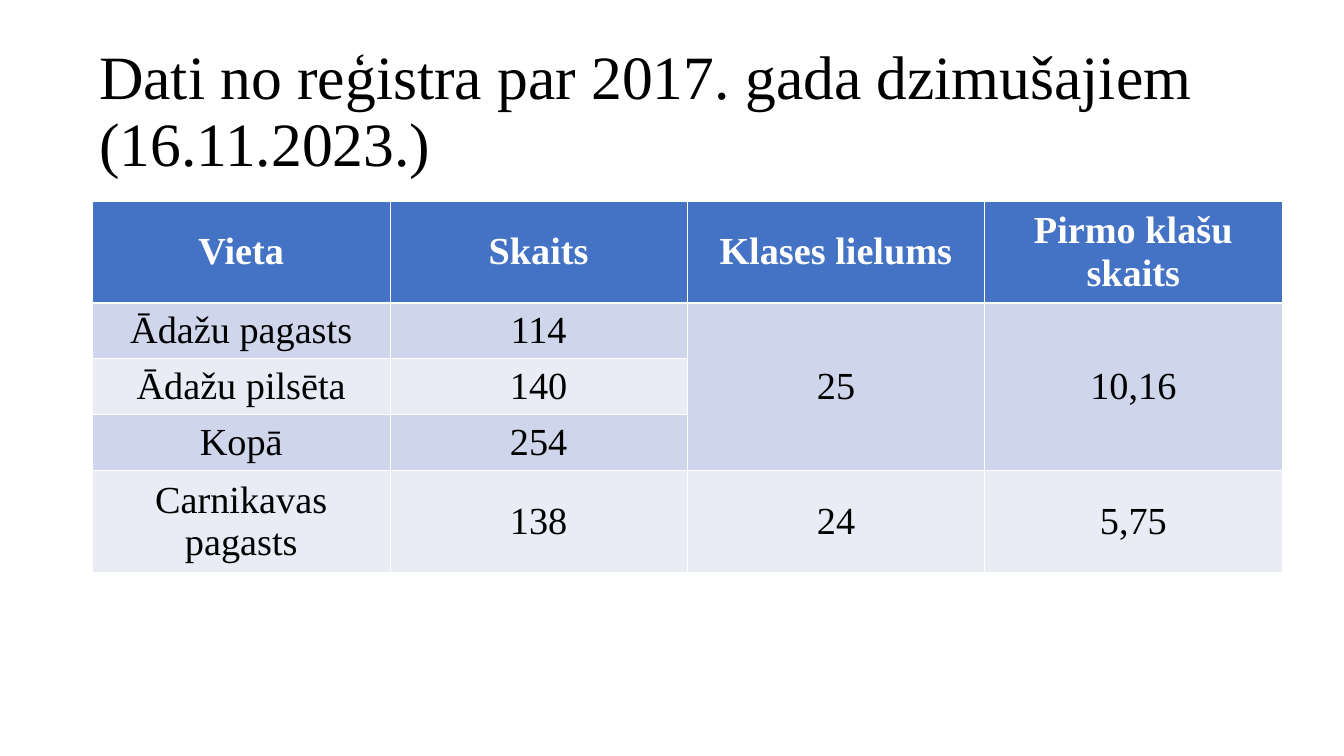
from pptx import Presentation
from pptx.dml.color import RGBColor
from pptx.enum.text import MSO_ANCHOR as Anchor, PP_ALIGN as Align
from pptx.util import Cm, Pt
from lxml.etree import SubElement
from pptx.oxml.ns import qn

HEADERS = ["Vieta", "Skaits", "Klases lielums", "Pirmo klašu skaits"]
ROWS = [
    ["Ādažu pagasts", "114", "25", "10,16"],
    ["Ādažu pilsēta", "140", "", ""],
    ["Kopā", "254", "", ""],
    ["Carnikavas pagasts", "138", "24", "5,75"],
]
ROW_HEIGHTS = [3.81, 2.09, 2.09, 2.09, 3.81]
COLUMN_WIDTH = 11.24


def color(value):
    return RGBColor.from_string(value)


class SlideBuilder:
    font = "Times New Roman"
    black, white = "000000", "FFFFFF"
    header_fill = "4472C4"
    band_fills = ["CFD5EA", "E9EBF5"]
    title_size, table_size = 66, 41

    def __init__(self, slide):
        self.slide = slide

    def format_runs(self, paragraph, size, text_color, bold=False):
        for run in paragraph.runs:
            run.font.name = self.font
            run.font.size = Pt(size)
            run.font.bold = bold
            run.font.color.rgb = color(text_color)

    def title(self, text, left, top, width, height):
        shape = self.slide.shapes.add_textbox(Cm(left), Cm(top), Cm(width), Cm(height))
        text_frame = shape.text_frame
        text_frame.word_wrap = True
        text_frame.vertical_anchor = Anchor.MIDDLE
        text_frame.text = text
        paragraph = text_frame.paragraphs[0]
        paragraph.line_spacing = 0.9
        self.format_runs(paragraph, self.title_size, self.black)

    def border(self, cell, side, points):
        properties = cell._tc.get_or_add_tcPr()
        line = SubElement(properties, qn(f"a:ln{side}"), w=str(Pt(points)))
        fill = SubElement(line, qn("a:solidFill"))
        SubElement(fill, qn("a:srgbClr"), val=self.white)

    def cell(self, cell, text, fill, text_color, header):
        cell.text = text
        cell.vertical_anchor = Anchor.MIDDLE
        cell.margin_left = cell.margin_right = Cm(0.38)
        cell.margin_top = cell.margin_bottom = Cm(0.19)
        paragraph = cell.text_frame.paragraphs[0]
        paragraph.alignment = Align.CENTER
        self.format_runs(paragraph, self.table_size, text_color, header)
        for side in "LRTB":
            self.border(cell, side, 3 if header and side == "B" else 1)
        cell.fill.solid()
        cell.fill.fore_color.rgb = color(fill)

    def table(self, rows, left, top, column_width, row_heights, merges):
        columns = len(rows[0])
        table = self.slide.shapes.add_table(
            len(rows), columns, Cm(left), Cm(top),
            Cm(column_width * columns), Cm(sum(row_heights)),
        ).table
        for column in table.columns:
            column.width = Cm(column_width)
        for index, (texts, height) in enumerate(zip(rows, row_heights)):
            header = index == 0
            fill = self.header_fill if header else self.band_fills[(index - 1) % 2]
            text_color = self.white if header else self.black
            table.rows[index].height = Cm(height)
            for column, text in enumerate(texts):
                self.cell(table.cell(index, column), text, fill, text_color, header)
        for first, last in merges:
            table.cell(*first).merge(table.cell(*last))


def main():
    presentation = Presentation()
    presentation.slide_width = Cm(50.8)
    presentation.slide_height = Cm(28.58)
    builder = SlideBuilder(presentation.slides.add_slide(presentation.slide_layouts[6]))
    builder.title(
        "Dati no reģistra par 2017. gada dzimušajiem (16.11.2023.)",
        3.5, 1.52, 43.82, 5.51,
    )
    merges = [((1, column), (3, column)) for column in (2, 3)]
    builder.table([HEADERS] + ROWS, 3.5, 7.6, COLUMN_WIDTH, ROW_HEIGHTS, merges)
    presentation.save("out.pptx")


if __name__ == "__main__":
    main()
